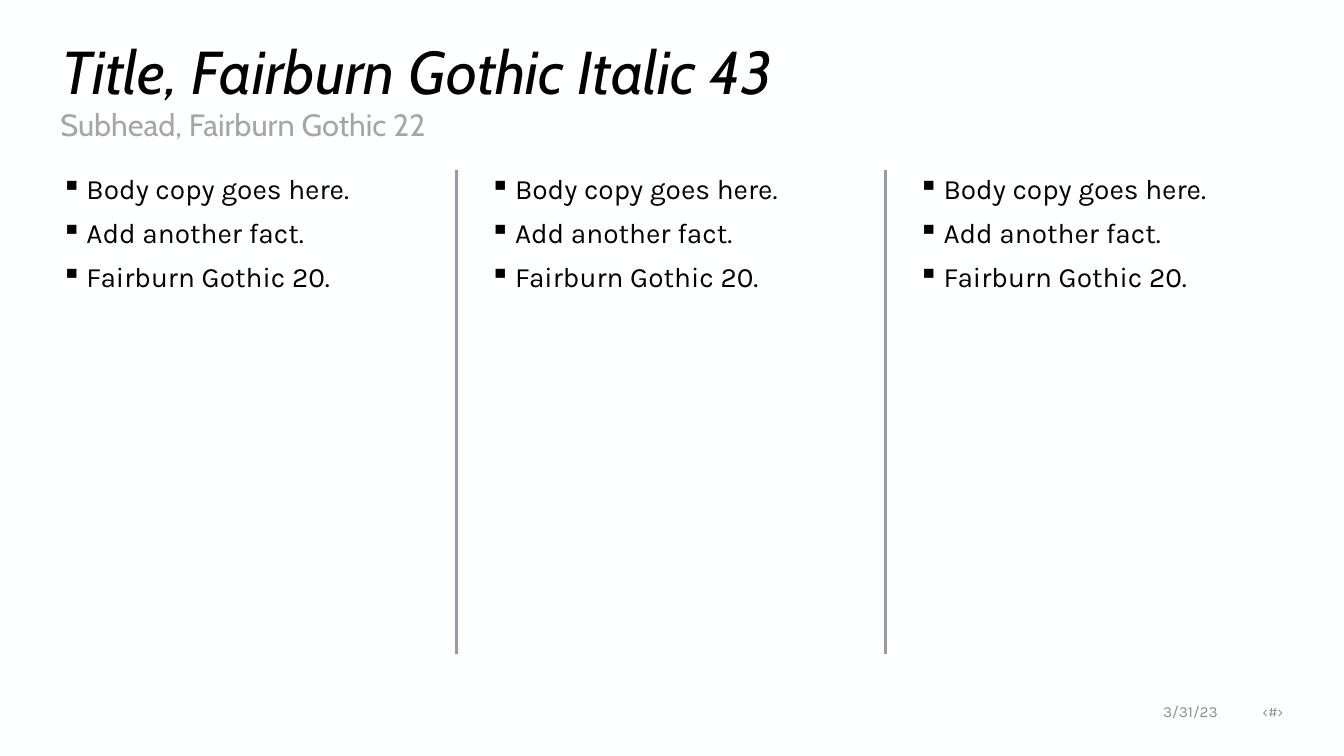
from dataclasses import dataclass

from lxml import etree
from pptx import Presentation
from pptx.dml.color import RGBColor
from pptx.enum.shapes import MSO_CONNECTOR
from pptx.enum.text import MSO_ANCHOR, MSO_AUTO_SIZE, PP_ALIGN
from pptx.oxml.ns import qn
from pptx.util import Inches, Pt

STRAIGHT = MSO_CONNECTOR.STRAIGHT
TOP, MIDDLE = MSO_ANCHOR.TOP, MSO_ANCHOR.MIDDLE
NO_FIT = MSO_AUTO_SIZE.NONE
LEFT = PP_ALIGN.LEFT
TITLE_ONLY = 5


@dataclass(frozen=True)
class Theme:
    background: str = "FEFFFF"
    ink: str = "000000"
    subhead: str = "A6A6A6"
    footer: str = "8C8C8C"
    divider: str = "979AA2"
    heading_font: str = "Cabin"
    body_font: str = "Karla"
    title_size: float = 43.2
    subhead_size: float = 22
    body_size: float = 20
    footer_size: float = 11
    divider_width: float = 2.25


THEME = Theme()
TITLE = "Title, Fairburn Gothic Italic 43"
SUBHEAD = "Subhead, Fairburn Gothic 22"
FACTS = ["Body copy goes here.", "Add another fact.", "Fairburn Gothic 20."]
DATE, PAGE_NUMBER = "3/31/23", "‹#›"
COLUMN_COUNT, COLUMN_PITCH = 3, 4.25
COLUMN_LEFT, COLUMN_TOP = 0.51, 1.69
COLUMN_WIDTH, COLUMN_HEIGHT = 3.84, 4.8
DIVIDER_LEFT = 4.53


def apply(target, values):
    for name, value in values.items():
        setattr(target, name, value)


def place(box, left, top, width, height):
    apply(box, {"left": Inches(left), "top": Inches(top),
                "width": Inches(width), "height": Inches(height)})


def prepare(frame, anchor):
    apply(frame, {"word_wrap": True, "auto_size": NO_FIT, "vertical_anchor": anchor})


def add_box(page, left, top, width, height, anchor=TOP):
    box = page.shapes.add_textbox(
        Inches(left), Inches(top), Inches(width), Inches(height))
    prepare(box.text_frame, anchor)
    return box.text_frame


def write(para, text, font, size, color, italic=False, line_spacing=0.9):
    apply(para, {"alignment": LEFT, "line_spacing": line_spacing})
    span = para.add_run()
    span.text = text
    apply(span.font, {"name": font, "size": Pt(size), "italic": italic})
    span.font.color.rgb = RGBColor.from_string(color)


def add_bullet(para):
    properties = para._p.get_or_add_pPr()
    properties.set("marL", str(Inches(0.25)))
    properties.set("indent", str(Inches(-0.25)))
    etree.SubElement(properties, qn("a:buChar"), char="▪")


def add_right_tabs(para, positions):
    tabs = etree.SubElement(para._p.get_or_add_pPr(), qn("a:tabLst"))
    for position in positions:
        etree.SubElement(tabs, qn("a:tab"), pos=str(Inches(position)), algn="r")


def set_title(page):
    title = page.shapes.title
    place(title, 0.51, 0.42, 12.32, 0.64)
    prepare(title.text_frame, MIDDLE)
    write(title.text_frame.paragraphs[0], TITLE, THEME.heading_font,
          THEME.title_size, THEME.ink, italic=True)


def add_subhead(page):
    frame = add_box(page, 0.5, 1.04, 12.33, 0.4)
    write(frame.paragraphs[0], SUBHEAD, THEME.heading_font,
          THEME.subhead_size, THEME.subhead)


def add_column(page, left):
    frame = add_box(page, left, COLUMN_TOP, COLUMN_WIDTH, COLUMN_HEIGHT)
    for index, fact in enumerate(FACTS):
        para = frame.add_paragraph() if index else frame.paragraphs[0]
        add_bullet(para)
        para.space_before = Pt(10 if index else 0)
        write(para, fact, THEME.body_font, THEME.body_size, THEME.ink)


def add_divider(page, left):
    divider = page.shapes.add_connector(
        STRAIGHT, Inches(left), Inches(COLUMN_TOP),
        Inches(left), Inches(COLUMN_TOP + COLUMN_HEIGHT))
    divider.line.width = Pt(THEME.divider_width)
    divider.line.color.rgb = RGBColor.from_string(THEME.divider)
    etree.SubElement(divider._element.spPr, qn("a:effectLst"))


def add_footer(page):
    para = add_box(page, 10.88, 6.88, 1.95, 0.35, MIDDLE).paragraphs[0]
    add_right_tabs(para, [1.1, 1.75])
    write(para, f"\t{DATE}\t{PAGE_NUMBER}", THEME.body_font,
          THEME.footer_size, THEME.footer, line_spacing=1.0)


def main():
    deck = Presentation()
    apply(deck, {"slide_width": Inches(13.33), "slide_height": Inches(7.5)})
    page = deck.slides.add_slide(deck.slide_layouts[TITLE_ONLY])
    page.background.fill.solid()
    page.background.fill.fore_color.rgb = RGBColor.from_string(THEME.background)
    set_title(page)
    add_subhead(page)
    for column in range(COLUMN_COUNT):
        add_column(page, COLUMN_LEFT + column * COLUMN_PITCH)
    for gap in range(COLUMN_COUNT - 1):
        add_divider(page, DIVIDER_LEFT + gap * COLUMN_PITCH)
    add_footer(page)
    deck.save("out.pptx")


if __name__ == "__main__":
    main()
